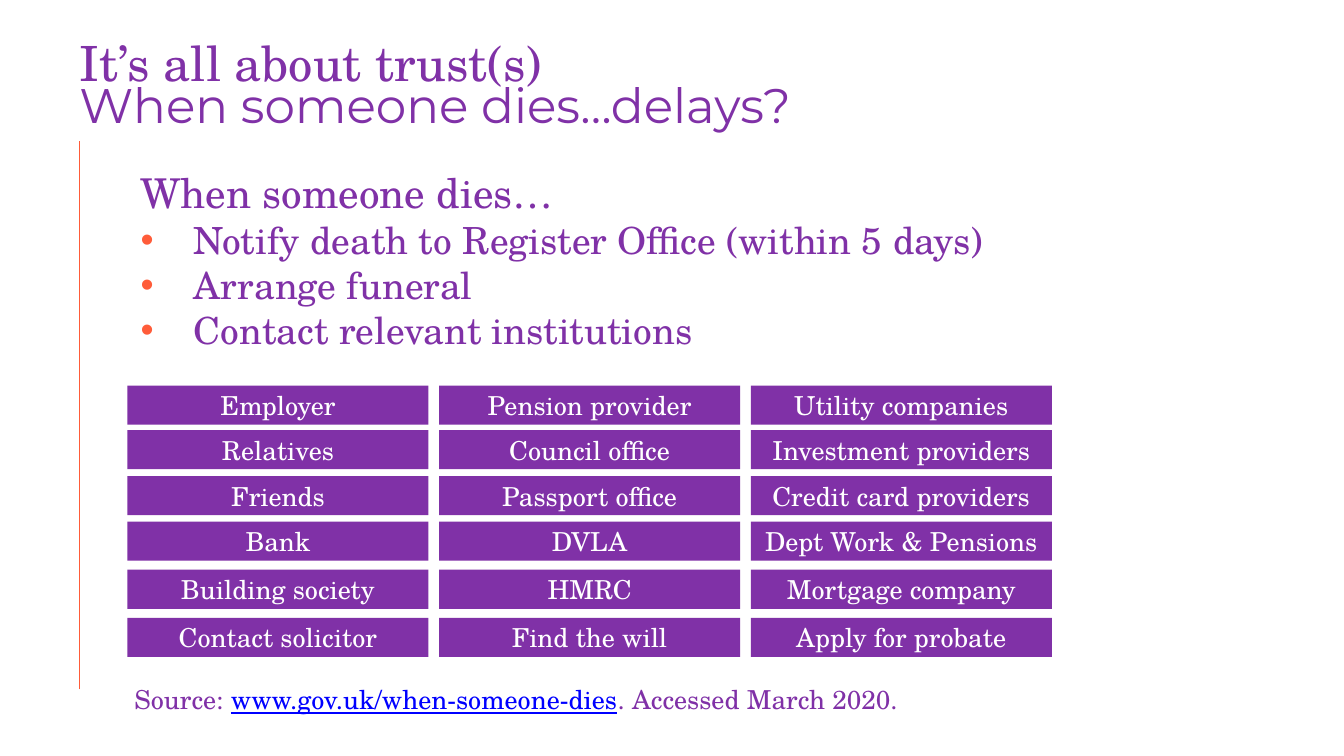
from dataclasses import dataclass

from lxml.etree import SubElement
from pptx import Presentation
from pptx.dml.color import RGBColor
from pptx.enum.shapes import MSO_CONNECTOR, MSO_SHAPE
from pptx.enum.text import MSO_ANCHOR, PP_ALIGN
from pptx.oxml.ns import qn
from pptx.slide import Slide
from pptx.text.text import TextFrame
from pptx.util import Cm, Pt

COLOURS = {
    "purple": "8031A7",
    "orange": "FF5C39",
    "link": "0000FF",
    "white": "FFFFFF",
}
SERIF = "TeX Gyre Schola"
SANS = "Montserrat"


@dataclass
class Span:
    text: str
    size: float
    colour: str = "purple"
    font: str = SERIF
    underline: bool = False


@dataclass
class Para:
    spans: list[Span]
    bullet: bool = False
    spacing: float = 1.0


@dataclass
class TextBlock:
    left: float
    top: float
    width: float
    height: float
    paras: list[Para]
    inset: bool = True


BLOCKS = [
    TextBlock(1.5, 0.76, 23.44, 1.22,
              [Para([Span("It’s all about trust(s)", 26)], spacing=0.88)], inset=False),
    TextBlock(1.5, 1.63, 23.42, 1.07,
              [Para([Span("When someone dies…delays?", 26, font=SANS)], spacing=0.8)], inset=False),
    TextBlock(2.41, 3.05, 17.09, 4.47, [
        Para([Span("When someone dies…", 22)]),
        Para([Span("Notify death to Register Office (within 5 days)", 20)], bullet=True),
        Para([Span("Arrange funeral", 20)], bullet=True),
        Para([Span("Contact relevant institutions", 20)], bullet=True),
    ]),
    TextBlock(2.29, 12.8, 17.09, 0.86, [Para([
        Span("Source: ", 14),
        Span("www.gov.uk/when-someone-dies", 14, "link", underline=True),
        Span(". Accessed March 2020.", 14),
    ])]),
]

CONTACT_ROWS = [
    ("Employer", "Pension provider", "Utility companies"),
    ("Relatives", "Council office", "Investment providers"),
    ("Friends", "Passport office", "Credit card providers"),
    ("Bank", "DVLA", "Dept Work & Pensions"),
    ("Building society", "HMRC", "Mortgage company"),
    ("Contact solicitor", "Find the will", "Apply for probate"),
]
ROW_TOPS = [7.29, 8.13, 9.0, 9.86, 10.77, 11.68]
GRID_LEFT, COLUMN_STEP = 2.41, 5.89
CELL_WIDTH, CELL_HEIGHT = 5.69, 0.74


def colour_of(name: str) -> RGBColor:
    return RGBColor.from_string(COLOURS[name])


def fill_text(frame: TextFrame, paras: list[Para], align: PP_ALIGN = PP_ALIGN.LEFT) -> None:
    for index, para in enumerate(paras):
        paragraph = frame.paragraphs[0] if index == 0 else frame.add_paragraph()
        paragraph.alignment = align
        paragraph.line_spacing = para.spacing
        if para.bullet:
            properties = paragraph._p.get_or_add_pPr()
            properties.set("marL", str(Cm(1)))
            properties.set("indent", str(-Cm(1)))
            bullet_colour = SubElement(properties, qn("a:buClr"))
            SubElement(bullet_colour, qn("a:srgbClr"), val=COLOURS["orange"])
            SubElement(properties, qn("a:buFont"), typeface="Arial")
            SubElement(properties, qn("a:buChar"), char="•")
        for span in para.spans:
            run = paragraph.add_run()
            run.text = span.text
            run.font.name = span.font
            run.font.size = Pt(span.size)
            run.font.color.rgb = colour_of(span.colour)
            run.font.underline = span.underline


def draw_block(page: Slide, block: TextBlock) -> None:
    box = page.shapes.add_textbox(Cm(block.left), Cm(block.top), Cm(block.width), Cm(block.height))
    frame = box.text_frame
    frame.word_wrap = True
    if not block.inset:
        frame.margin_left = frame.margin_right = frame.margin_top = frame.margin_bottom = 0
    fill_text(frame, block.paras)


def draw_contact(page: Slide, label: str, left: float, top: float) -> None:
    box = page.shapes.add_shape(
        MSO_SHAPE.RECTANGLE, Cm(left), Cm(top), Cm(CELL_WIDTH), Cm(CELL_HEIGHT))
    box.shadow.inherit = False
    box.fill.solid()
    box.fill.fore_color.rgb = colour_of("purple")
    box.line.fill.background()
    box.text_frame.word_wrap = True
    box.text_frame.vertical_anchor = MSO_ANCHOR.MIDDLE
    fill_text(box.text_frame, [Para([Span(label, 14, "white")])], PP_ALIGN.CENTER)


def draw_side_rule(page: Slide) -> None:
    rule = page.shapes.add_connector(
        MSO_CONNECTOR.STRAIGHT, Cm(1.5), Cm(13.03), Cm(1.5), Cm(2.67))
    rule.line.color.rgb = colour_of("orange")
    rule.line.width = Pt(0.75)
    SubElement(rule._element.spPr, qn("a:effectLst"))


def main() -> None:
    deck = Presentation()
    deck.slide_width, deck.slide_height = Cm(25.4), Cm(14.29)
    page = deck.slides.add_slide(deck.slide_layouts[6])
    draw_side_rule(page)
    for block in BLOCKS:
        draw_block(page, block)
    for top, labels in zip(ROW_TOPS, CONTACT_ROWS):
        for column, label in enumerate(labels):
            draw_contact(page, label, GRID_LEFT + column * COLUMN_STEP, top)
    deck.save("out.pptx")


if __name__ == "__main__":
    main()
